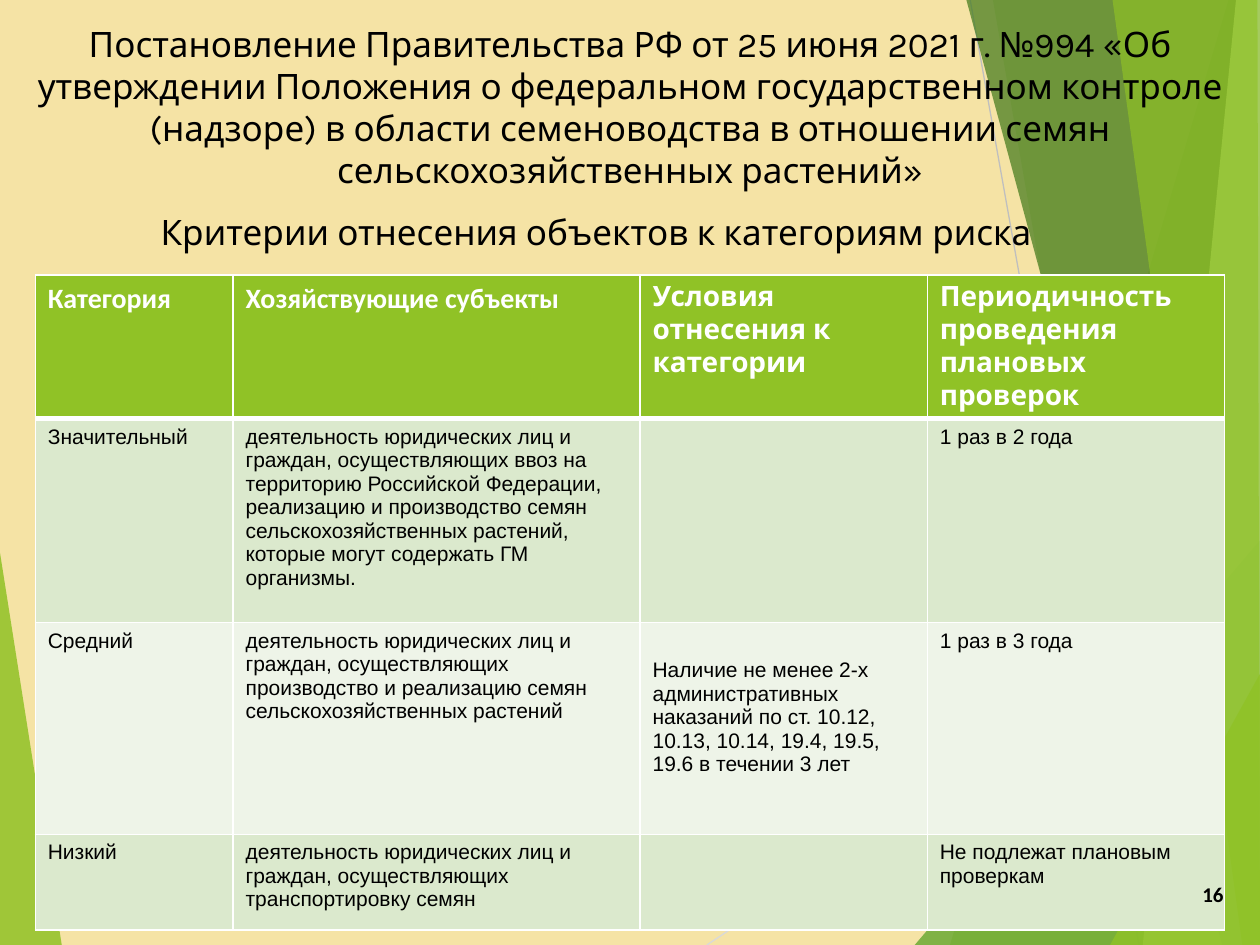
from lxml import etree
from pptx import Presentation
from pptx.dml.color import RGBColor
from pptx.enum.shapes import MSO_CONNECTOR
from pptx.enum.text import MSO_ANCHOR, PP_ALIGN
from pptx.oxml.ns import qn
from pptx.util import Inches, Pt

STRAIGHT = MSO_CONNECTOR.STRAIGHT
TOP, MIDDLE = MSO_ANCHOR.TOP, MSO_ANCHOR.MIDDLE
LEFT, CENTER, RIGHT = PP_ALIGN.LEFT, PP_ALIGN.CENTER, PP_ALIGN.RIGHT
HEX = {
    "sand": "F5E3A5", "lime": "90C226", "green": "54A021", "moss": "3F7819",
    "pale": "C0E474", "mist": "DBE9CD", "frost": "EEF4E8",
    "silver": "D9D9D9", "grey": "BFBFBF", "white": "FFFFFF", "black": "000000",
}
RGB = {name: RGBColor.from_string(code) for name, code in HEX.items()}

deck = Presentation()
deck.slide_width, deck.slide_height = Inches(10), Inches(7.5)
# All places are percent of the slide's width (COL) and height (ROW).
COL, ROW = deck.slide_width / 100, deck.slide_height / 100
slide = deck.slides.add_slide(deck.slide_layouts[6])
slide.background.fill.solid()
slide.background.fill.fore_color.rgb = RGB["sand"]
shapes = slide.shapes


def write(frame, text, size, font, color, bold=False, align=LEFT, anchor=TOP):
    frame.word_wrap = True
    frame.vertical_anchor = anchor
    para = frame.paragraphs[0]
    para.alignment = align
    run = para.add_run()
    run.text = text
    run.font.size, run.font.name, run.font.bold = Pt(size), font, bold
    run.font.color.rgb = RGB[color]


def edge(props, side, spot, points):
    """Give one side of a table cell a white line."""
    line = etree.Element(qn("a:" + side), w=str(Pt(points)))
    fill = etree.SubElement(line, qn("a:solidFill"))
    etree.SubElement(fill, qn("a:srgbClr"), val=HEX["white"])
    props.insert(spot, line)


# Backdrop: two thin lines among translucent facets, from back to front
FACETS = [
    ("lime", 85, [(0, 58.5), (4.9, 100), (0, 100)]),
    ("silver", None, [(56.1, 100), (100, 61)]),
    ("grey", None, [(77, 0), (90.4, 100)]),
    ("lime", 30, [(97.5, 0), (75.4, 100), (100, 100), (100, 0)]),
    ("lime", 20, [(78.8, 0), (91.9, 100), (100, 100), (100, 0)]),
    ("green", 72, [(72.6, 100), (100, 57.2), (100, 100)]),
    ("moss", 70, [(76.7, 0), (97, 100), (100, 100), (100, 0)]),
    ("pale", 70, [(98.1, 0), (90.7, 100), (100, 100), (100, 0)]),
    ("lime", 65, [(88.3, 0), (98.6, 100), (100, 100), (99.8, 0)]),
    ("lime", 80, [(88.1, 100), (100, 71.3), (100, 100)]),
]
for color, alpha, marks in FACETS:
    points = [(round(x * COL), round(y * ROW)) for x, y in marks]
    if alpha is None:
        line = shapes.add_connector(STRAIGHT, *points[0], *points[1])
        line.line.color.rgb = RGB[color]
        line.line.width = Pt(0.75)
        etree.SubElement(line._element.spPr, qn("a:effectLst"))
        continue
    pen = shapes.build_freeform(*points[0])
    pen.add_line_segments(points[1:], close=True)
    facet = pen.convert_to_shape()
    facet.shadow.inherit = False
    facet.line.fill.background()
    facet.fill.solid()
    facet.fill.fore_color.rgb = RGB[color]
    tint = facet._element.spPr.find(qn("a:solidFill"))[0]
    etree.SubElement(tint, qn("a:alpha"), val=str(alpha * 1000))

# Criteria table
WIDTHS = [15.7, 32.3, 22.8, 23.6]
HEIGHTS = [14.1, 21.6, 22.4, 10.1]
FILLS = ["lime", "mist", "frost", "mist"]
CELLS = [
    ["Категория", "Хозяйствующие субъекты", "Условия отнесения к категории",
     "Периодичность проведения плановых проверок"],
    ["Значительный",
     "деятельность юридических лиц и граждан, осуществляющих ввоз на "
     "территорию Российской Федерации, реализацию и производство семян "
     "сельскохозяйственных растений, которые могут содержать ГМ организмы.",
     "", "1 раз в 2 года"],
    ["Средний",
     "деятельность юридических лиц и граждан, осуществляющих производство "
     "и реализацию семян сельскохозяйственных растений",
     "Наличие не менее 2-х административных наказаний по ст. 10.12, 10.13, "
     "10.14, 19.4, 19.5, 19.6 в течении 3 лет",
     "1 раз в 3 года"],
    ["Низкий",
     "деятельность юридических лиц и граждан, осуществляющих "
     "транспортировку семян",
     "", "Не подлежат плановым проверкам"],
]
grid = shapes.add_table(
    len(HEIGHTS), len(WIDTHS), round(2.8 * COL), round(29.1 * ROW),
    round(sum(WIDTHS) * COL), round(sum(HEIGHTS) * ROW)).table
for col, width in zip(grid.columns, WIDTHS):
    col.width = round(width * COL)
for row, height in zip(grid.rows, HEIGHTS):
    row.height = round(height * ROW)
for r, texts in enumerate(CELLS):
    for c, text in enumerate(texts):
        cell = grid.cell(r, c)
        cell.fill.solid()
        cell.fill.fore_color.rgb = RGB[FILLS[r]]
        sides = {"lnL": 1, "lnR": 1, "lnT": 3 if r == 1 else 1,
                 "lnB": 3 if r == 0 else 1}
        for spot, (side, points) in enumerate(sides.items()):
            edge(cell._tc.get_or_add_tcPr(), side, spot, points)
        if r == 0:
            font = "Calibri" if c < 2 else "Karla"
            write(cell.text_frame, text, 16, font, "white", bold=True)
        elif text:
            write(cell.text_frame, text, 12, "Arial", "black")
        if r == c == 2:
            cell.vertical_anchor = MIDDLE
            cell.margin_bottom = round(3 * ROW)

# Heading, table caption and page number
LABELS = [
    (1.2, 1.7, 97.6, 18, "Постановление Правительства РФ от 25 июня 2021 г. №994 "
     "«Об утверждении Положения о федеральном государственном контроле "
     "(надзоре) в области семеноводства в отношении семян "
     "сельскохозяйственных растений»", 20, "Karla", False, CENTER, TOP),
    (2.8, 21.6, 89, 5.2, "Критерии отнесения объектов к категориям риска",
     20, "Karla", False, CENTER, TOP),
    (92.5, 92, 5.6, 5.3, "16", 12, "Calibri", True, RIGHT, MIDDLE),
]
for x, y, wide, high, text, size, font, bold, align, anchor in LABELS:
    box = shapes.add_textbox(round(x * COL), round(y * ROW),
                             round(wide * COL), round(high * ROW))
    write(box.text_frame, text, size, font, "black", bold, align, anchor)

deck.save("out.pptx")
